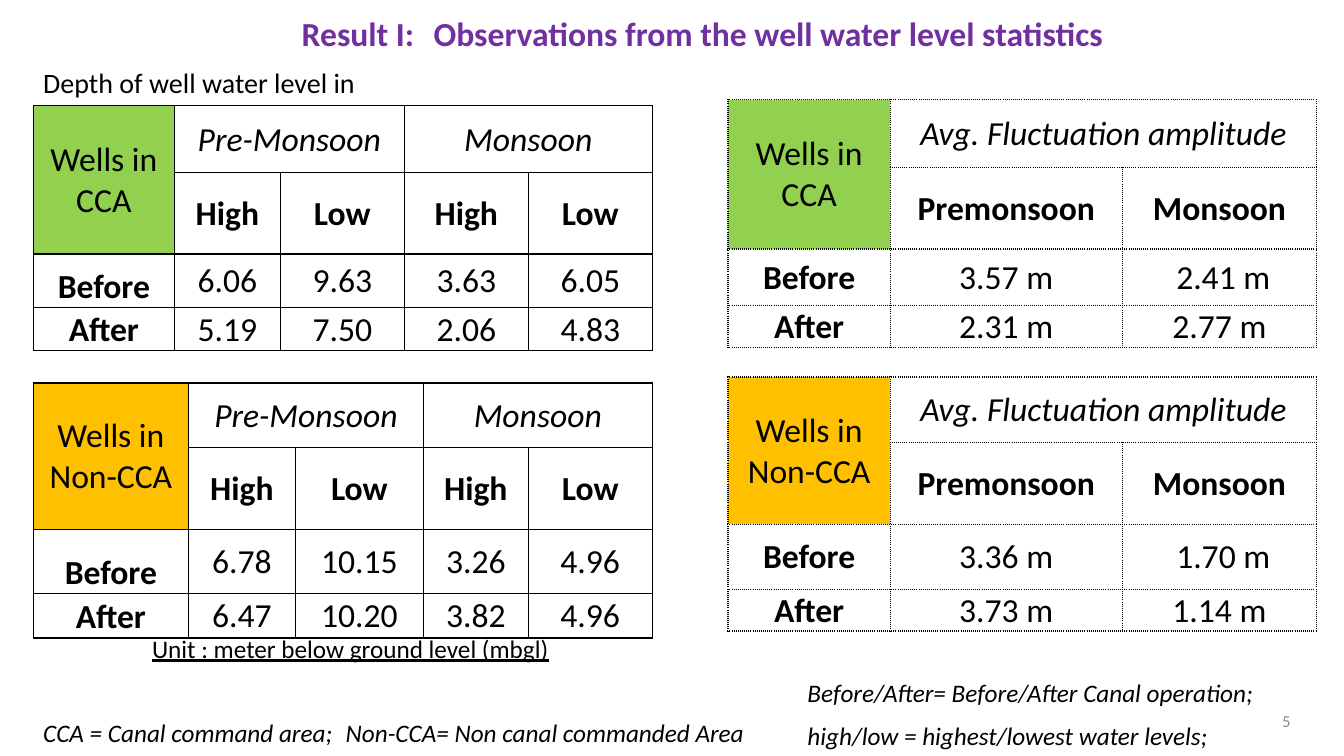
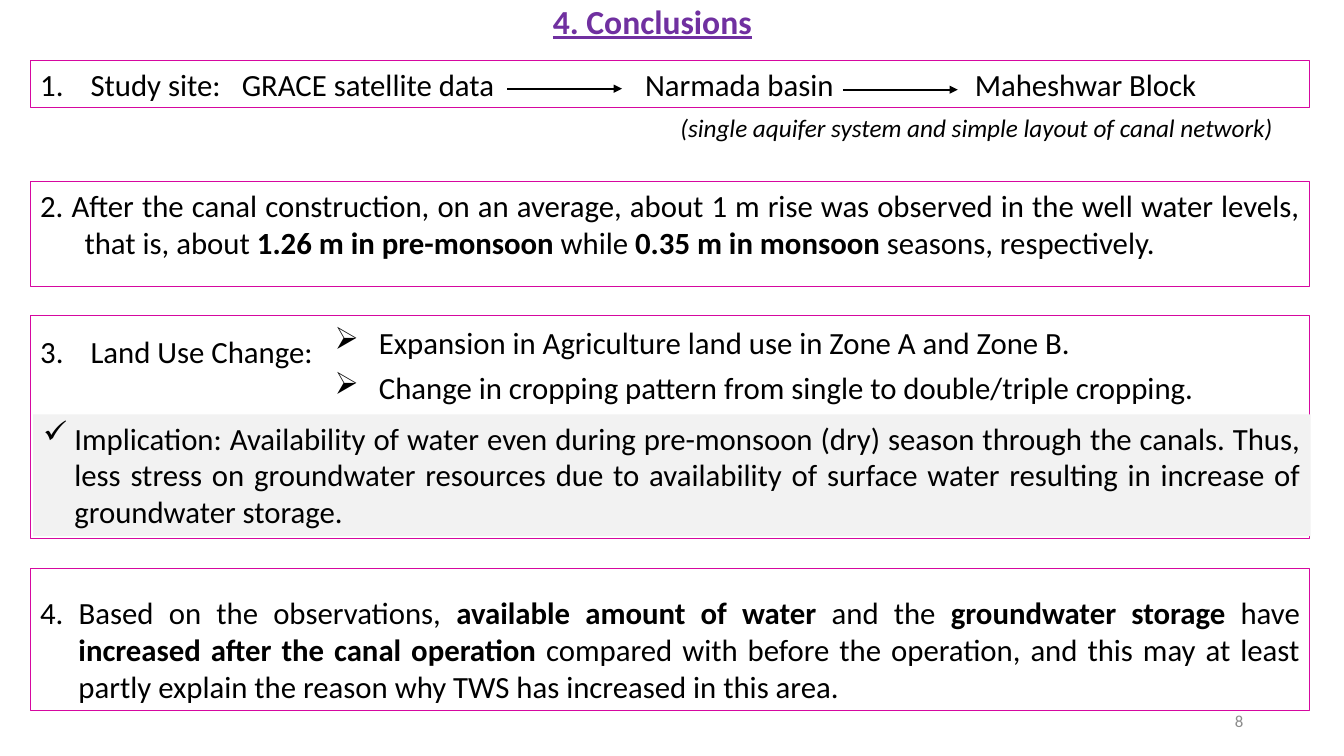
import pptx
import pptx.util
import pptx.dml.color
import pptx.enum.shapes
import pptx.enum.text
import pptx.oxml.ns
from lxml import etree

RGBColor = pptx.dml.color.RGBColor
SHAPE = pptx.enum.shapes.MSO_SHAPE
ALIGN = pptx.enum.text.PP_ALIGN
ANCHOR = pptx.enum.text.MSO_ANCHOR
qn = pptx.oxml.ns.qn

# Shared look
PURPLE = RGBColor(0x70, 0x30, 0xA0)
MAGENTA = RGBColor(0xD6, 0x08, 0xA0)
GREEN = RGBColor(0x92, 0xD0, 0x50)
AMBER = RGBColor(0xFF, 0xC0, 0x00)
PALE_GRAY = RGBColor(0xF2, 0xF2, 0xF2)
MID_GRAY = RGBColor(0x8C, 0x8C, 0x8C)
BLACK = RGBColor(0, 0, 0)
WHITE = RGBColor(0xFF, 0xFF, 0xFF)
FONT = "Calibri"
EMU_PER_PX = 9144
SPACE_BEFORE = 6


def px(length):
    return pptx.util.Emu(length * EMU_PER_PX)


def add_child(parent, tag, **attributes):
    child = etree.SubElement(parent, qn(tag))
    for name, value in attributes.items():
        child.set(name, str(value))
    return child


# Text
def style_font(para, size, color=BLACK, bold=False, italic=False, underline=False):
    font = para.font
    font.name, font.size = FONT, pptx.util.Pt(size)
    font.bold, font.italic, font.underline = bold, italic, underline
    font.color.rgb = color


def write_para(para, text, size, align=ALIGN.LEFT, indent=0, bullet=None,
               start=None, space_before=0, **look):
    """Text is a string or a list of strings, every second one bold."""
    spans = [text] if isinstance(text, str) else text
    for index, words in enumerate(spans):
        span = para.add_run()
        span.text = words
        if index % 2:
            span.font.bold = True
    para.alignment = align
    para.space_before = pptx.util.Pt(space_before)
    props = para._p.get_or_add_pPr()
    if indent:
        props.set("marL", str(px(indent)))
        props.set("indent", str(-px(indent)))
    if start:
        add_child(props, "a:buAutoNum", type="arabicPeriod", startAt=start)
    elif bullet:
        add_child(props, "a:buChar", char=bullet)
    style_font(para, size, **look)


def fill_frame(frame, texts, size, anchor=ANCHOR.TOP, wrap=True, top_inset=5, **look):
    frame.word_wrap = wrap
    frame.vertical_anchor = anchor
    frame.margin_left = frame.margin_right = px(10)
    frame.margin_top, frame.margin_bottom = px(top_inset), px(5)
    for index, text in enumerate(texts):
        para = frame.add_paragraph() if index else frame.paragraphs[0]
        write_para(para, text, size, **look)


def add_text(page, box, text, size, **look):
    texts = text if isinstance(text, tuple) else (text,)
    shape = page.shapes.add_textbox(*map(px, box))
    fill_frame(shape.text_frame, texts, size, **look)


def add_panel(page, box, text, fill=WHITE, line=MAGENTA, **look):
    shape = page.shapes.add_shape(SHAPE.RECTANGLE, *map(px, box))
    shape.shadow.inherit = False
    shape.fill.solid()
    shape.fill.fore_color.rgb = fill
    if line is None:
        shape.line.fill.background()
    else:
        shape.line.color.rgb = line
        shape.line.width = pptx.util.Pt(0.75)
    fill_frame(shape.text_frame, (text,), 22, align=ALIGN.JUSTIFY,
               space_before=SPACE_BEFORE, **look)


def add_title(page, box, text, underline=False):
    add_text(page, box, text, 24, align=ALIGN.CENTER, color=PURPLE,
             bold=True, underline=underline)


def add_page_number(page, left, number):
    add_text(page, (left, 695, 300, 40), number, 12, anchor=ANCHOR.MIDDLE,
             align=ALIGN.RIGHT, color=MID_GRAY)


def add_arrow(page, left, top, length):
    arrow = page.shapes.add_connector(
        pptx.enum.shapes.MSO_CONNECTOR.STRAIGHT,
        px(left), px(top), px(left + length), px(top))
    arrow.line.color.rgb = BLACK
    arrow.line.width = pptx.util.Pt(1.5)
    add_child(arrow.line._get_or_add_ln(), "a:tailEnd", type="triangle")
    add_child(arrow._element.spPr, "a:effectLst")


# Tables
def style_cell(cell, fill, anchor, dash):
    cell.margin_left = cell.margin_right = cell.margin_top = px(1)
    cell.margin_bottom = 0
    cell.vertical_anchor = anchor
    props = cell._tc.get_or_add_tcPr()
    for side in ("a:lnL", "a:lnR", "a:lnT", "a:lnB"):
        border = add_child(props, side, w=pptx.util.Pt(1))
        solid = add_child(border, "a:solidFill")
        add_child(solid, "a:srgbClr", val=BLACK)
        add_child(border, "a:prstDash", val=dash)
    cell.fill.solid()
    cell.fill.fore_color.rgb = fill


def add_well_table(page, box, widths, heights, rows, corner_fill, groups,
                   dash, label_anchor):
    """Groups lists the first and last column under each top heading."""
    table = page.shapes.add_table(len(heights), len(widths), *map(px, box)).table
    table.first_row = table.horz_banding = False
    for column, width in zip(table.columns, widths):
        column.width = px(width)
    for row, height in zip(table.rows, heights):
        row.height = px(height)
    for row, texts in enumerate(rows):
        for column, text in enumerate(texts):
            cell = table.cell(row, column)
            is_label = column == 0 and row > 1
            is_corner = column == 0 and row < 2
            style_cell(cell, corner_fill if is_corner else WHITE,
                       label_anchor if is_label else ANCHOR.MIDDLE, dash)
            if text:
                write_para(cell.text_frame.paragraphs[0], text, 24,
                           align=ALIGN.CENTER,
                           bold=is_label or (row == 1 and column > 0),
                           italic=row == 0 and column > 0)
    table.cell(0, 0).merge(table.cell(1, 0))
    for first, last in groups:
        table.cell(0, first).merge(table.cell(0, last))


def add_level_table(page, box, widths, heights, corner, corner_fill, before, after):
    rows = [[corner, "Pre-Monsoon", "", "Monsoon", ""],
            ["", "High", "Low", "High", "Low"],
            ["Before", *before], ["After", *after]]
    add_well_table(page, box, widths, heights, rows, corner_fill,
                   [(1, 2), (3, 4)], "solid", ANCHOR.BOTTOM)


def add_amplitude_table(page, box, heights, corner, corner_fill, before, after):
    rows = [[corner, "Avg. Fluctuation amplitude", ""],
            ["", "Premonsoon", "Monsoon"],
            ["Before", *before], ["After", *after]]
    add_well_table(page, box, [161, 230, 193], heights, rows, corner_fill,
                   [(1, 2)], "sysDot", ANCHOR.MIDDLE)


# Slide: well water level statistics
def build_statistics(page):
    add_title(page, (189, 8, 332, 50), "Result I:")
    add_title(page, (326, 8, 872, 50),
              "Observations from the well water level statistics")
    add_text(page, (33, 60, 587, 44), "Depth of well water level in", 20)

    add_level_table(page, (33, 105, 613, 227), [140, 105, 123, 123, 123],
                    [66, 66, 53, 43], "Wells in CCA", GREEN,
                    ["6.06", "9.63", "3.63", "6.05"],
                    ["5.19", "7.50", "2.06", "4.83"])
    add_level_table(page, (33, 380, 613, 237), [154, 106, 127, 104, 123],
                    [64, 64, 64, 44], "Wells in Non-CCA", AMBER,
                    ["6.78", "10.15", "3.26", "4.96"],
                    ["6.47", "10.20", "3.82", "4.96"])
    add_amplitude_table(page, (722, 99, 584, 231), [67, 67, 56, 42],
                        "Wells in CCA", GREEN,
                        ["3.57 m", " 2.41 m"], ["2.31 m", "2.77 m"])
    add_amplitude_table(page, (722, 374, 584, 237), [65, 65, 65, 41],
                        "Wells in Non-CCA", AMBER,
                        ["3.36 m", " 1.70 m"], ["3.73 m", "1.14 m"])

    # Unit and legend
    add_text(page, (141, 623, 431, 40), "Unit : meter below ground level (mbgl)",
             18, underline=True)
    legend = [
        ((33, 707, 792, 40),
         "CCA = Canal command area;\tNon-CCA= Non canal commanded Area"),
        ((791, 667, 499, 40), "Before/After= Before/After Canal operation;"),
        ((791, 710, 428, 40), "high/low = highest/lowest water levels;"),
    ]
    for box, text in legend:
        add_text(page, box, text, 18, italic=True)
    add_page_number(page, 990, "5")


# Slide: conclusions
def add_study_site(page, left, top, width):
    add_panel(page, (left, top, width, 47), "Study site: \tGRACE satellite data",
              indent=50, start=1)
    for offset, name in ((600, "Narmada basin"), (927, "Maheshwar Block")):
        add_text(page, (left + offset, top, 260, 47), name, 22)
    for offset, drop in ((473, 28), (806, 29)):
        add_arrow(page, left + offset, top + drop, 114)
    add_text(page, (left + 635, top + 47, 621, 40),
             "(single aquifer system and simple layout of canal network)",
             18, wrap=False, italic=True)


def add_land_use(page, left, top, width):
    add_panel(page, (left, top, width, 221), "Land Use Change:",
              indent=50, start=3, top_inset=17)
    add_text(page, (left + 292, top + 3, 984, 93),
             ("Expansion in Agriculture land use in Zone A and Zone B.",
              "Change in cropping pattern from single to double/triple cropping. "),
             22, align=ALIGN.JUSTIFY, indent=44, bullet="➢",
             space_before=SPACE_BEFORE)
    add_panel(page, (left + 3, top + 98, width - 2, 121),
              "Implication: Availability of water even during pre-monsoon (dry) "
              "season through the canals. Thus, less stress on groundwater "
              "resources due to availability of surface water resulting in "
              "increase of groundwater storage.",
              fill=PALE_GRAY, line=None, indent=31, bullet="✓")


def build_conclusions(page):
    left, width = 30, 1269
    add_page_number(page, 943, "8")
    add_title(page, (481, -4, 332, 50), "4. Conclusions", underline=True)
    add_study_site(page, left, 60, width)
    add_panel(page, (left, 180, width, 104),
              ["2. After the canal construction, on an average, about 1 m rise was "
               "observed in the well water levels, that is, about ",
               "1.26 m in pre-monsoon ", "while ", "0.35 m in monsoon ",
               "seasons, respectively."], indent=44)
    add_land_use(page, left, 313, width)
    add_panel(page, (left, 564, width, 141),
              ["4. Based on the observations, ", "available amount of water ",
               "and the ", "groundwater storage ", "have",
               " increased after the canal operation ",
               "compared with before the operation, and this may at least partly "
               "explain the reason why TWS has increased in this area."],
              indent=38, top_inset=25)


def main():
    deck = pptx.Presentation()
    deck.slide_width, deck.slide_height = px(1333), px(750)
    blank = deck.slide_layouts[6]
    for build in (build_statistics, build_conclusions):
        build(deck.slides.add_slide(blank))
    deck.save("out.pptx")


if __name__ == "__main__":
    main()
